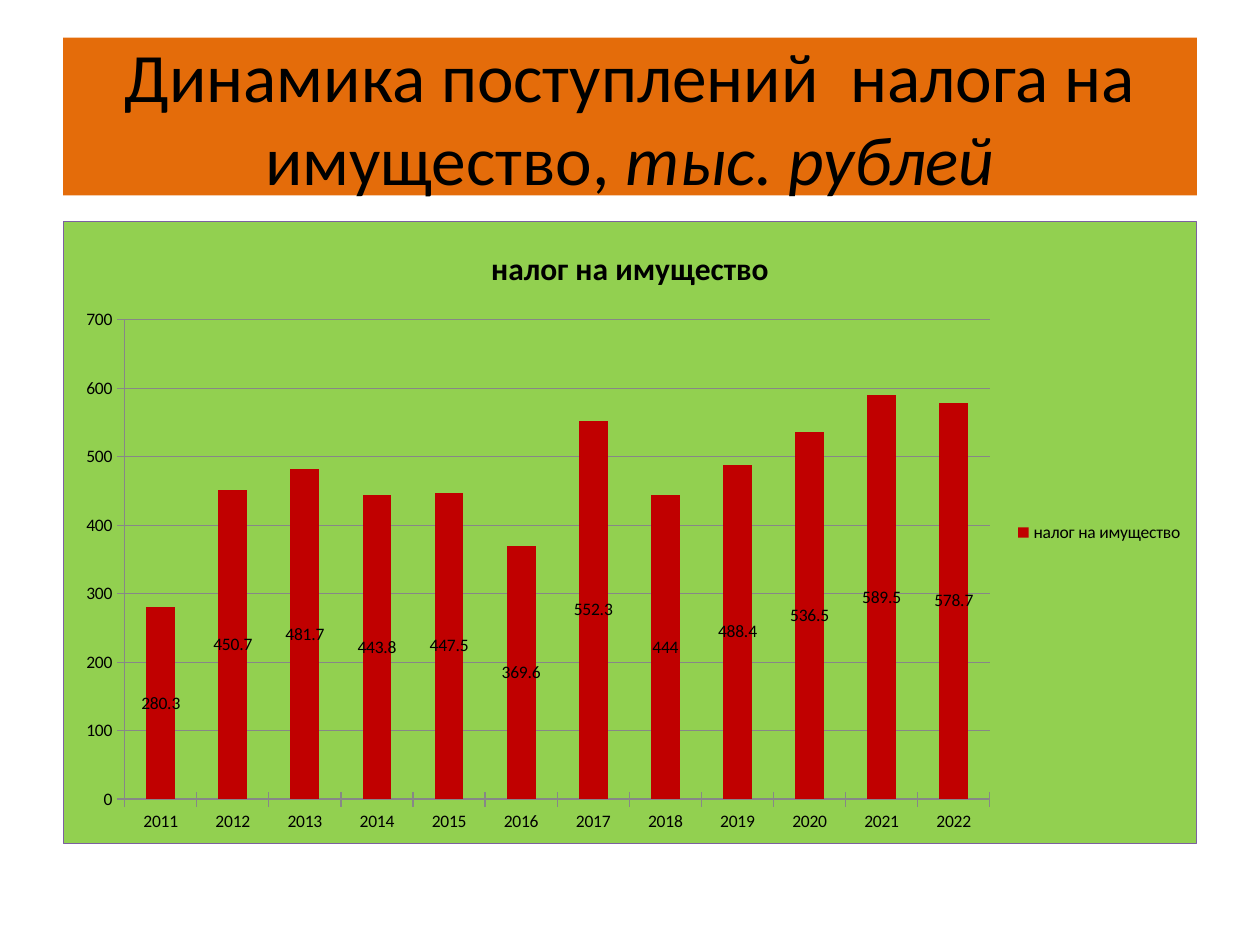
from lxml import etree
from pptx import Presentation
from pptx.chart.data import CategoryChartData as Data
from pptx.dml.color import RGBColor
from pptx.enum.chart import XL_CHART_TYPE as Kind
from pptx.enum.chart import XL_LABEL_POSITION as Spot
from pptx.enum.chart import XL_LEGEND_POSITION as Side
from pptx.enum.chart import XL_TICK_MARK as Tick
from pptx.enum.text import MSO_ANCHOR as Anchor
from pptx.enum.text import MSO_AUTO_SIZE as Fit
from pptx.enum.text import PP_ALIGN as Align
from pptx.oxml import parse_xml
from pptx.util import Cm, Pt

ORANGE = RGBColor(0xE4, 0x6C, 0x0A)
GREEN = RGBColor(0x92, 0xD0, 0x50)
RED = RGBColor(0xC0, 0x00, 0x00)
PURPLE = RGBColor(0x7D, 0x60, 0xA0)
GREY = RGBColor(0x87, 0x87, 0x87)
BLACK = RGBColor(0, 0, 0)

LEFT, WIDTH = Cm(1.27), Cm(22.86)
NAME = "налог на имущество"
YEARS = [str(year) for year in range(2011, 2023)]
SUMS = [280.3, 450.7, 481.7, 443.8, 447.5, 369.6,
        552.3, 444, 488.4, 536.5, 589.5, 578.7]


def set_all(item, **vals):
    for key, val in vals.items():
        setattr(item, key, val)


def set_font(font, size, **vals):
    set_all(font, name="Calibri", size=Pt(size), **vals)
    font.color.rgb = BLACK


def set_line(line, color):
    line.color.rgb = color
    line.width = Pt(0.75)


def add_title(slide):
    title = slide.shapes.title
    set_all(title, left=LEFT, top=Cm(0.76), width=WIDTH, height=Cm(3.18))
    title.fill.solid()
    title.fill.fore_color.rgb = ORANGE
    frame = title.text_frame
    set_all(frame, auto_size=Fit.NONE, word_wrap=True,
            vertical_anchor=Anchor.MIDDLE)
    para = frame.paragraphs[0]
    para.alignment = Align.CENTER
    parts = [("Динамика поступлений  налога на имущество, ", False),
             ("тыс. рублей", True)]
    for text, slant in parts:
        run = para.add_run()
        run.text = text
        set_font(run.font, 39.6, italic=slant)


def fill_area(chart, fill, edge):
    """Paint the chart background, which has no public method."""
    area = parse_xml(
        '<c:spPr xmlns:c="http://schemas.openxmlformats.org/drawingml/2006/chart"'
        ' xmlns:a="http://schemas.openxmlformats.org/drawingml/2006/main">'
        f'<a:solidFill><a:srgbClr val="{fill}"/></a:solidFill>'
        f'<a:ln w="{Pt(0.75)}"><a:solidFill><a:srgbClr val="{edge}"/>'
        '</a:solidFill></a:ln></c:spPr>')
    root = chart.element
    root.find(etree.QName(area).text.replace("spPr", "chart")).addnext(area)


def add_chart(slide):
    data = Data()
    data.categories = YEARS
    data.add_series(NAME, SUMS)
    chart = slide.shapes.add_chart(Kind.COLUMN_STACKED, LEFT, Cm(4.45),
                                   WIDTH, Cm(12.57), data).chart
    set_font(chart.font, 10)
    fill_area(chart, GREEN, PURPLE)

    # Heading and legend
    chart.has_title = True
    head = chart.chart_title.text_frame
    head.text = NAME
    set_font(head.paragraphs[0].runs[0].font, 18, bold=True)
    chart.has_legend = True
    set_all(chart.legend, position=Side.RIGHT, include_in_layout=False)

    # Axes
    for axis in (chart.category_axis, chart.value_axis):
        axis.major_tick_mark = Tick.CROSS
        set_line(axis.format.line, GREY)
    set_all(chart.value_axis, has_major_gridlines=True, minimum_scale=0,
            maximum_scale=700, major_unit=100)
    set_line(chart.value_axis.major_gridlines.format.line, GREY)

    # Bars and their values
    plot = chart.plots[0]
    set_all(plot, gap_width=150, overlap=100, vary_by_categories=False)
    bars = plot.series[0]
    bars.format.fill.solid()
    bars.format.fill.fore_color.rgb = RED
    set_all(bars.data_labels, show_value=True, position=Spot.CENTER)
    set_font(bars.data_labels.font, 10)


def main():
    deck = Presentation()
    set_all(deck, slide_width=Cm(25.4), slide_height=Cm(19.05))
    slide = deck.slides.add_slide(deck.slide_layouts[5])
    add_title(slide)
    add_chart(slide)
    deck.save("out.pptx")


if __name__ == "__main__":
    main()
